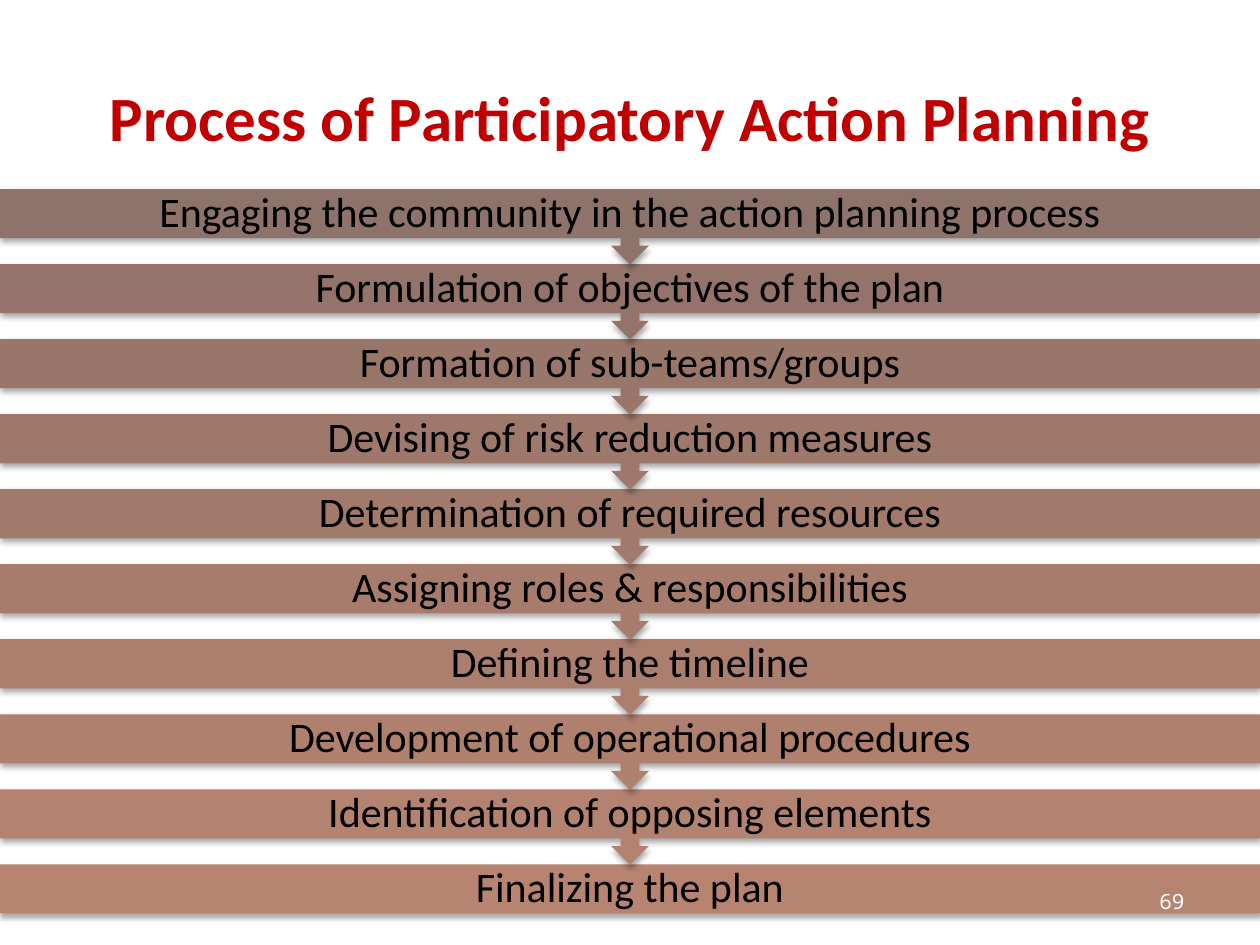
from dataclasses import dataclass

import lxml.etree
import pptx
import pptx.dml.color
import pptx.enum.shapes
import pptx.enum.text
import pptx.oxml.ns
import pptx.util

Inches = pptx.util.Inches
Pt = pptx.util.Pt
Align = pptx.enum.text.PP_ALIGN
Preset = pptx.enum.shapes.MSO_SHAPE

COLORS = {
    "title": "C00000", "text": "000000", "number": "FFFFFF", "shadow": "000000",
    "engage": "8E736A", "objectives": "94746A", "teams": "99766A",
    "measures": "9E786B", "resources": "A27A6C", "roles": "A77C6D",
    "timeline": "AB7E6E", "procedures": "B0806F", "opposing": "B48271",
    "finalize": "B88472",
}
SLIDE_W, SLIDE_H = 10, 7.5
FIRST_TOP, LAST_TOP = 1.5, 6.86
BAR_H, CALLOUT_H = 0.39, 0.6


@dataclass(frozen=True)
class Step:
    text: str
    color: str


@dataclass(frozen=True)
class Label:
    text: str
    left: float
    top: float
    width: float
    height: float
    size: int
    color: str
    font: str = "Calibri"
    bold: bool = False
    align: Align = Align.CENTER
    inset_x: float = 0.1
    inset_y: float = 0.05
    line_spacing: float = 1.0


STEPS = [
    Step("Engaging the community in the action planning process", "engage"),
    Step("Formulation of objectives of the plan", "objectives"),
    Step("Formation of sub-teams/groups", "teams"),
    Step("Devising of risk reduction measures", "measures"),
    Step("Determination of required resources", "resources"),
    Step("Assigning roles & responsibilities", "roles"),
    Step("Defining the timeline", "timeline"),
    Step("Development of operational procedures", "procedures"),
    Step("Identification of opposing elements", "opposing"),
    Step("Finalizing the plan", "finalize"),
]


def rgb(name: str) -> pptx.dml.color.RGBColor:
    return pptx.dml.color.RGBColor.from_string(COLORS[name])


def add_label(s: pptx.slide.Slide, label: Label) -> None:
    box = s.shapes.add_textbox(Inches(label.left), Inches(label.top),
                               Inches(label.width), Inches(label.height))
    tf = box.text_frame
    tf.text = label.text
    tf.word_wrap = True
    tf.vertical_anchor = pptx.enum.text.MSO_ANCHOR.MIDDLE
    tf.margin_left = tf.margin_right = Inches(label.inset_x)
    tf.margin_top = tf.margin_bottom = Inches(label.inset_y)
    p = tf.paragraphs[0]
    p.alignment = label.align
    p.line_spacing = label.line_spacing
    r = p.runs[0]
    r.font.name = label.font
    r.font.size = Pt(label.size)
    r.font.bold = label.bold
    r.font.color.rgb = rgb(label.color)


def add_shadow(sp: pptx.shapes.autoshape.Shape) -> None:
    qn = pptx.oxml.ns.qn
    sp.shadow.inherit = False
    effects = sp._element.spPr.find(qn("a:effectLst"))
    shadow = lxml.etree.SubElement(
        effects, qn("a:outerShdw"), blurRad=str(Pt(3.1)), dist=str(Pt(1.8)),
        dir="5400000", rotWithShape="0")
    color = lxml.etree.SubElement(shadow, qn("a:srgbClr"), val=COLORS["shadow"])
    lxml.etree.SubElement(color, qn("a:alpha"), val="35000")


def add_step(s: pptx.slide.Slide, step: Step, top: float, is_last: bool) -> None:
    preset = Preset.RECTANGLE if is_last else Preset.UP_ARROW_CALLOUT
    height = BAR_H if is_last else CALLOUT_H
    sp = s.shapes.add_shape(preset, Inches(0), Inches(top),
                            Inches(SLIDE_W), Inches(height))
    sp.rotation = 0 if is_last else 180
    sp.fill.solid()
    sp.fill.fore_color.rgb = rgb(step.color)
    sp.line.fill.background()
    add_shadow(sp)
    add_label(s, Label(step.text, 0, top, SLIDE_W, BAR_H, 24, "text",
                       inset_x=0.19, inset_y=0.19, line_spacing=0.9))


def main() -> None:
    prs = pptx.Presentation()
    prs.slide_width, prs.slide_height = Inches(SLIDE_W), Inches(SLIDE_H)
    s = prs.slides.add_slide(prs.slide_layouts[6])
    add_label(s, Label("Process of Participatory Action Planning",
                       0.5, 0.3, 9, 1.25, 36, "title", bold=True))
    last = len(STEPS) - 1
    pitch = (LAST_TOP - FIRST_TOP) / last
    for i, step in reversed(list(enumerate(STEPS))):
        add_step(s, step, FIRST_TOP + i * pitch, i == last)
    add_label(s, Label("69", 7.17, 6.95, 2.33, 0.4, 12, "number",
                       font="Noto Sans Mono", align=Align.RIGHT))
    prs.save("out.pptx")


if __name__ == "__main__":
    main()
